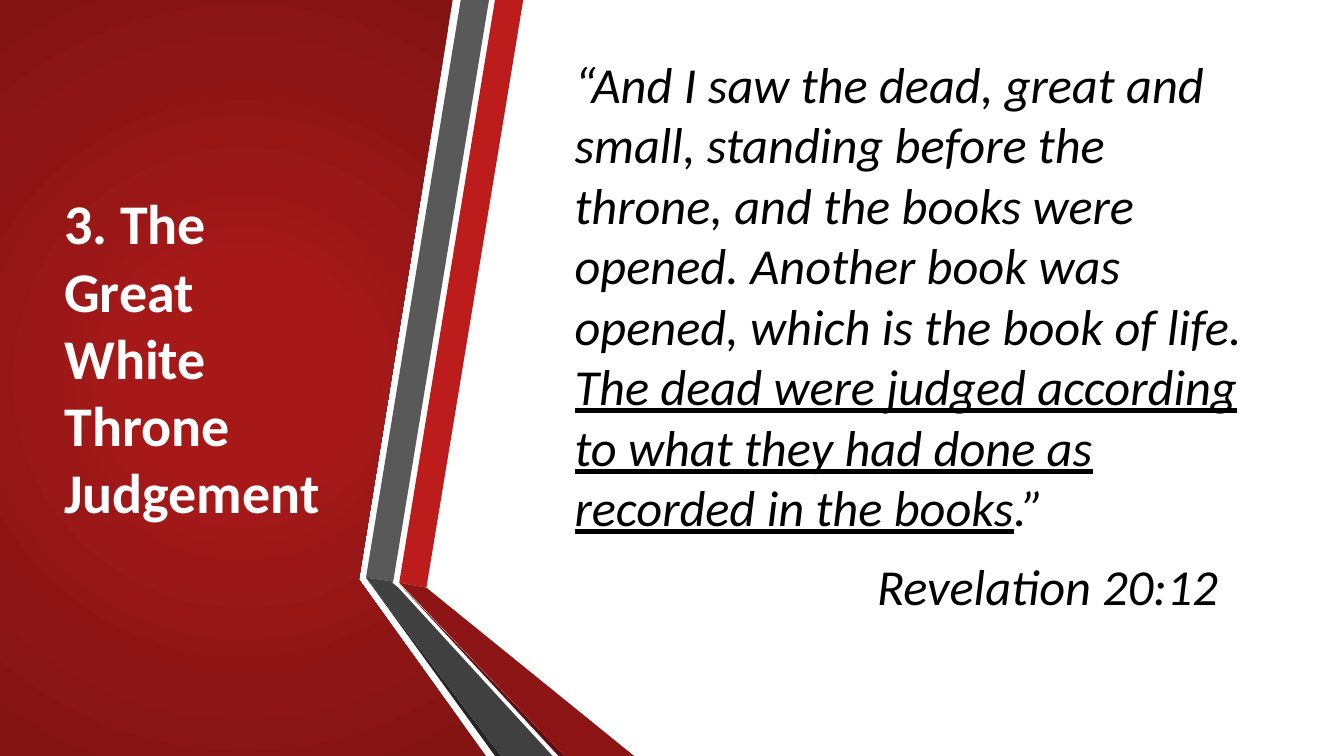
import pptx
import pptx.dml.color
import pptx.enum.text
import pptx.oxml
import pptx.oxml.ns
import pptx.util
from dataclasses import dataclass

Inches = pptx.util.Inches
Pt = pptx.util.Pt
ANCHOR = pptx.enum.text.MSO_ANCHOR


@dataclass(frozen=True)
class Theme:
    font: str = "Calibri"
    title_size: int = 40
    body_size: int = 36
    white: str = "FFFFFF"
    black: str = "000000"
    red: str = "BC1C1C"
    red_fold: str = "8D1515"
    red_edge: str = "5E0E0E"
    grey: str = "595959"
    grey_fold: str = "404040"
    grey_edge: str = "262626"
    panel_stops: tuple = ((0, "A71919"), (23, "A71919"), (69, "8D1515"), (97, "841414"))


class SlideBuilder:
    def __init__(self, slide, theme):
        self.slide = slide
        self.theme = theme

    def polygon(self, points, color):
        """Draw a closed, unlined outline; points are in inches."""
        points = [(Inches(x), Inches(y)) for x, y in points]
        builder = self.slide.shapes.build_freeform(*points[0], scale=1.0)
        builder.add_line_segments(points[1:], close=True)
        sp = builder.convert_to_shape()
        sp.shadow.inherit = False
        sp.line.fill.background()
        sp.fill.solid()
        sp.fill.fore_color.rgb = pptx.dml.color.RGBColor.from_string(color)
        return sp

    def radial_polygon(self, points, stops):
        """Draw an outline shaded from its centre; stops are (percent, colour)."""
        sp = self.polygon(points, stops[0][1])
        gs = "".join(
            f'<a:gs pos="{pos * 1000}"><a:srgbClr val="{color}"/></a:gs>'
            for pos, color in stops
        )
        grad = pptx.oxml.parse_xml(
            f'<a:gradFill {pptx.oxml.ns.nsdecls("a")} rotWithShape="1">'
            f'<a:gsLst>{gs}</a:gsLst><a:path path="circle">'
            '<a:fillToRect l="50000" t="50000" r="50000" b="50000"/>'
            '</a:path></a:gradFill>'
        )
        solid = sp.element.spPr.find(pptx.oxml.ns.qn("a:solidFill"))
        solid.getparent().replace(solid, grad)
        return sp

    def text_box(self, left, top, width, height):
        box = self.slide.shapes.add_textbox(
            Inches(left), Inches(top), Inches(width), Inches(height))
        tf = box.text_frame
        tf.word_wrap = True
        tf.vertical_anchor = ANCHOR.MIDDLE
        return tf

    def run(self, p, text, size, color, **style):
        r = p.add_run()
        r.text = text
        r.font.name = self.theme.font
        r.font.size = Pt(size)
        r.font.color.rgb = pptx.dml.color.RGBColor.from_string(color)
        for name, value in style.items():
            setattr(r.font, name, value)


def draw_ribbons(s, theme):
    s.polygon([(3.96, 5.78), (4.23, 5.83), (5.19, 0), (4.91, 0)], theme.red)
    s.polygon([(4.85, 0), (4.57, 0), (3.63, 5.73), (3.9, 5.77)], theme.grey)
    s.polygon([(3.63, 5.73), (4.91, 7.5), (4.97, 7.5)], theme.grey_edge)
    s.polygon([(3.96, 5.79), (5.54, 7.5), (5.6, 7.5)], theme.red_edge)
    s.polygon([(3.96, 5.78), (5.6, 7.5), (6.29, 7.5), (4.23, 5.83)], theme.red_fold)
    s.polygon([(5.48, 7.5), (3.95, 5.83), (3.89, 5.78), (3.9, 5.77),
               (3.63, 5.73), (4.97, 7.5)], theme.grey_fold)


def main():
    prs = pptx.Presentation()
    prs.slide_width = Inches(13.33)
    prs.slide_height = Inches(7.5)
    theme = Theme()
    s = SlideBuilder(prs.slides.add_slide(prs.slide_layouts[6]), theme)

    s.radial_polygon([(0, 0), (4.49, 0), (3.56, 5.75), (4.82, 7.5), (0, 7.5)],
                     theme.panel_stops)
    title = s.text_box(0.54, 0.75, 3, 5.58)
    s.run(title.paragraphs[0], "3. The Great White Throne Judgement",
          theme.title_size, theme.white, bold=True)

    draw_ribbons(s, theme)

    body = s.text_box(5.6, 0.75, 6.98, 5.58)
    body.margin_bottom = Inches(0.5)
    verse = body.paragraphs[0]
    reference = body.add_paragraph()
    for p, text, underline in (
        (verse, "“And I saw the dead, great and small, standing before the throne, "
                "and the books were opened. Another book was opened, which is the "
                "book of life. ", False),
        (verse, "The dead were judged according to what they had done as "
                "recorded in the books", True),
        (verse, ".”", False),
        (reference, "Revelation 20:12", False),
    ):
        s.run(p, text, theme.body_size, theme.black, italic=True, underline=underline)
    verse.space_after = Pt(6)
    reference.space_before = Pt(7)
    reference._p.get_or_add_pPr().set("marL", str(Inches(3)))

    prs.save("out.pptx")


if __name__ == "__main__":
    main()
